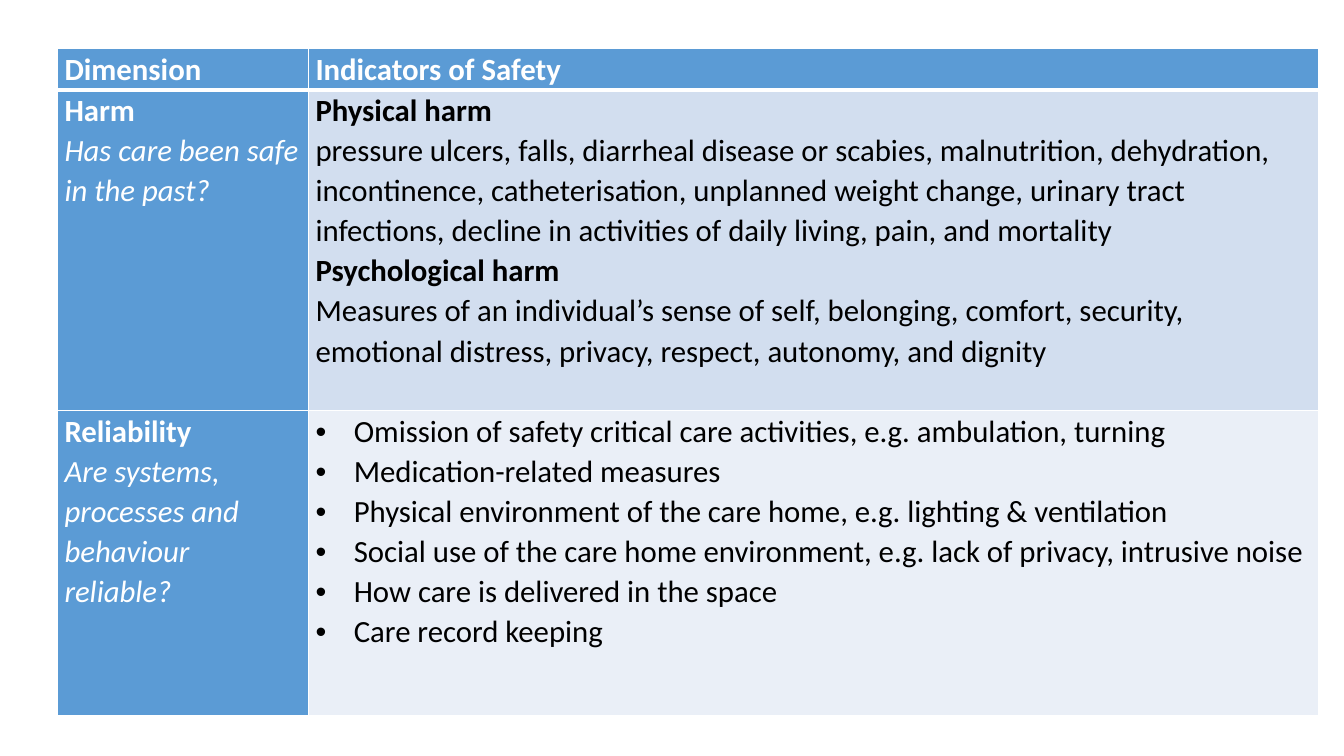
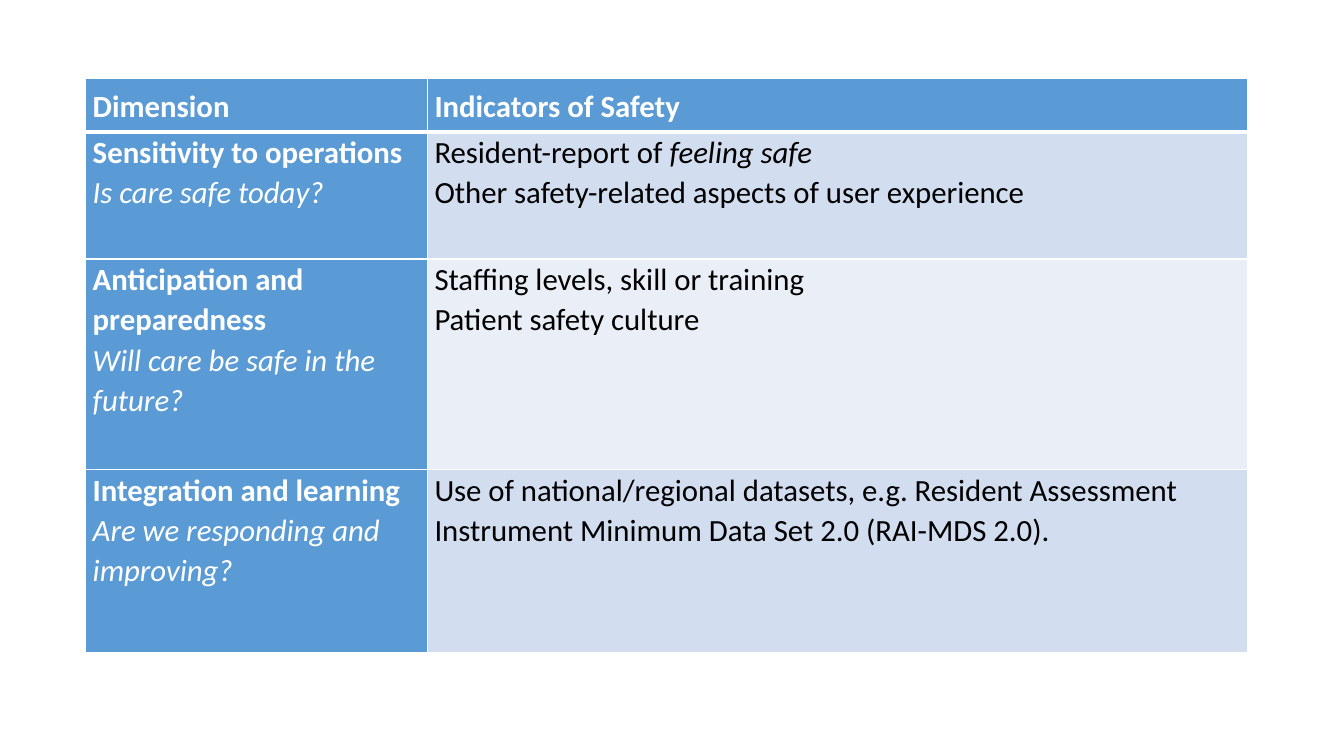
import lxml.etree
import pptx
import pptx.dml.color
import pptx.enum.text
import pptx.oxml.ns
import pptx.util

PX = 9144
WHITE, BLACK, BLUE = "FFFFFF", "000000", "5B9BD5"
BANDS = ("D2DEEF", "EAEFF7")
HEADINGS = ("Dimension", "Indicators of Safety")
STYLES = {
    "heading": {"color": WHITE, "bold": True, "italic": False},
    "question": {"color": WHITE, "bold": False, "italic": True},
    "label": {"color": BLACK, "bold": True, "italic": False},
    "body": {"color": BLACK, "bold": False, "italic": False},
    "stress": {"color": BLACK, "bold": False, "italic": True},
}


def px(length):
    return pptx.util.Emu(length * PX)


def rgb(code):
    return pptx.dml.color.RGBColor.from_string(code)


def apply(target, values):
    for name, value in values.items():
        setattr(target, name, value)


def add_xml(parent, tag, **attributes):
    return lxml.etree.SubElement(parent, pptx.oxml.ns.qn(tag), attributes)


def bulleted(*lines):
    return [(True, [("body", line)]) for line in lines]


def plain(*lines):
    return [(False, list(spans)) for spans in lines]


def dimension(name, question):
    return plain([("heading", name)], [("question", question)])


class TableDeck:
    """Builds a deck of banded tables in one shared style."""

    font_name = "Calibri"
    font_size = pptx.util.Pt(22)
    indent = 38
    cell_format = {"margin_left": px(7), "margin_right": px(7),
                   "margin_top": 0, "margin_bottom": 0}

    def __init__(self):
        self.deck = pptx.Presentation()
        apply(self.deck, {"slide_width": px(1333), "slide_height": px(750)})
        self.page = None

    def add_page(self):
        self.page = self.deck.slides.add_slide(self.deck.slide_layouts[6])

    def add_span(self, para, style, text):
        span = para.add_run()
        span.text = text
        look = STYLES[style]
        apply(span.font, {"name": self.font_name, "size": self.font_size,
                          "bold": look["bold"], "italic": look["italic"]})
        span.font.color.rgb = rgb(look["color"])

    def add_bullet(self, para):
        properties = para._p.get_or_add_pPr()
        properties.set("marL", str(px(self.indent)))
        properties.set("indent", str(px(-self.indent)))
        add_xml(properties, "a:buFont", typeface="Arial")
        add_xml(properties, "a:buChar", char="•")

    def add_borders(self, cell, top, bottom):
        properties = cell._tc.get_or_add_tcPr()
        for side, points in (("L", 1), ("R", 1), ("T", top), ("B", bottom)):
            line = add_xml(properties, f"a:ln{side}", w=str(pptx.util.Pt(points)))
            fill = add_xml(line, "a:solidFill")
            add_xml(fill, "a:srgbClr", val=WHITE)

    def fill_cell(self, cell, paragraphs, color, anchor):
        apply(cell, {**self.cell_format, "vertical_anchor": anchor})
        cell.fill.solid()
        cell.fill.fore_color.rgb = rgb(color)
        frame = cell.text_frame
        for index, (has_bullet, spans) in enumerate(paragraphs):
            para = frame.add_paragraph() if index else frame.paragraphs[0]
            para.line_spacing = 1.07
            if has_bullet:
                self.add_bullet(para)
            for style, text in spans:
                self.add_span(para, style, text)

    def add_table(self, left, top, widths, heights, rows):
        header = [plain([("heading", text)]) for text in HEADINGS]
        content = [header, *rows]
        table = self.page.shapes.add_table(
            len(content), len(widths), px(left), px(top),
            px(sum(widths)), px(sum(heights))).table
        apply(table, {"first_row": False, "horz_banding": False})
        for column, width in zip(table.columns, widths):
            column.width = px(width)
        for number, (row, height) in enumerate(zip(table.rows, heights)):
            row.height = px(height)
            is_header = number == 0
            anchors = pptx.enum.text.MSO_ANCHOR
            anchor = anchors.MIDDLE if is_header else anchors.TOP
            for column, cell in enumerate(row.cells):
                is_blue = is_header or column == 0
                color = BLUE if is_blue else BANDS[(number - 1) % 2]
                self.add_borders(cell, 3 if number == 1 else 1, 3 if is_header else 1)
                self.fill_cell(cell, content[number][column], color, anchor)


HARM_AND_RELIABILITY = [
    (dimension("Harm", "Has care been safe in the past?"),
     plain(
         [("label", "Physical harm")],
         [("body", "pressure ulcers, falls, diarrheal disease or scabies, "
                   "malnutrition, dehydration, incontinence, catheterisation, "
                   "unplanned weight change, urinary tract infections, decline "
                   "in activities of daily living, pain, and mortality")],
         [("label", "Psychological harm")],
         [("body", "Measures of an individual’s sense of self, belonging, "
                   "comfort, security, emotional distress, privacy, respect, "
                   "autonomy, and dignity")])),
    (dimension("Reliability", "Are systems, processes and behaviour reliable?"),
     bulleted(
         "Omission of safety critical care activities, e.g. ambulation, turning",
         "Medication-related measures",
         "Physical environment of the care home, e.g. lighting & ventilation",
         "Social use of the care home environment, e.g. lack of privacy, intrusive noise",
         "How care is delivered in the space",
         "Care record keeping")),
]

PRESENT_AND_FUTURE = [
    (dimension("Sensitivity to operations", "Is care safe today?"),
     plain(
         [("body", "Resident-report of "), ("stress", "feeling safe")],
         [("body", "Other safety-related aspects of user experience")])),
    (dimension("Anticipation and preparedness", "Will care be safe in the future?"),
     plain(
         [("body", "Staffing levels, skill or training")],
         [("body", "Patient safety culture")])),
    (dimension("Integration and learning", "Are we responding and improving?"),
     plain(
         [("body", "Use of national/regional datasets, e.g. Resident Assessment "
                   "Instrument Minimum Data Set 2.0 (RAI-MDS 2.0).")])),
]


def main():
    builder = TableDeck()
    builder.add_page()
    builder.add_table(57, 48, (249, 1002), (41, 318, 303), HARM_AND_RELIABILITY)
    builder.add_page()
    builder.add_table(85, 78, (339, 813), (53, 126, 209, 181), PRESENT_AND_FUTURE)
    builder.deck.save("out.pptx")


if __name__ == "__main__":
    main()
